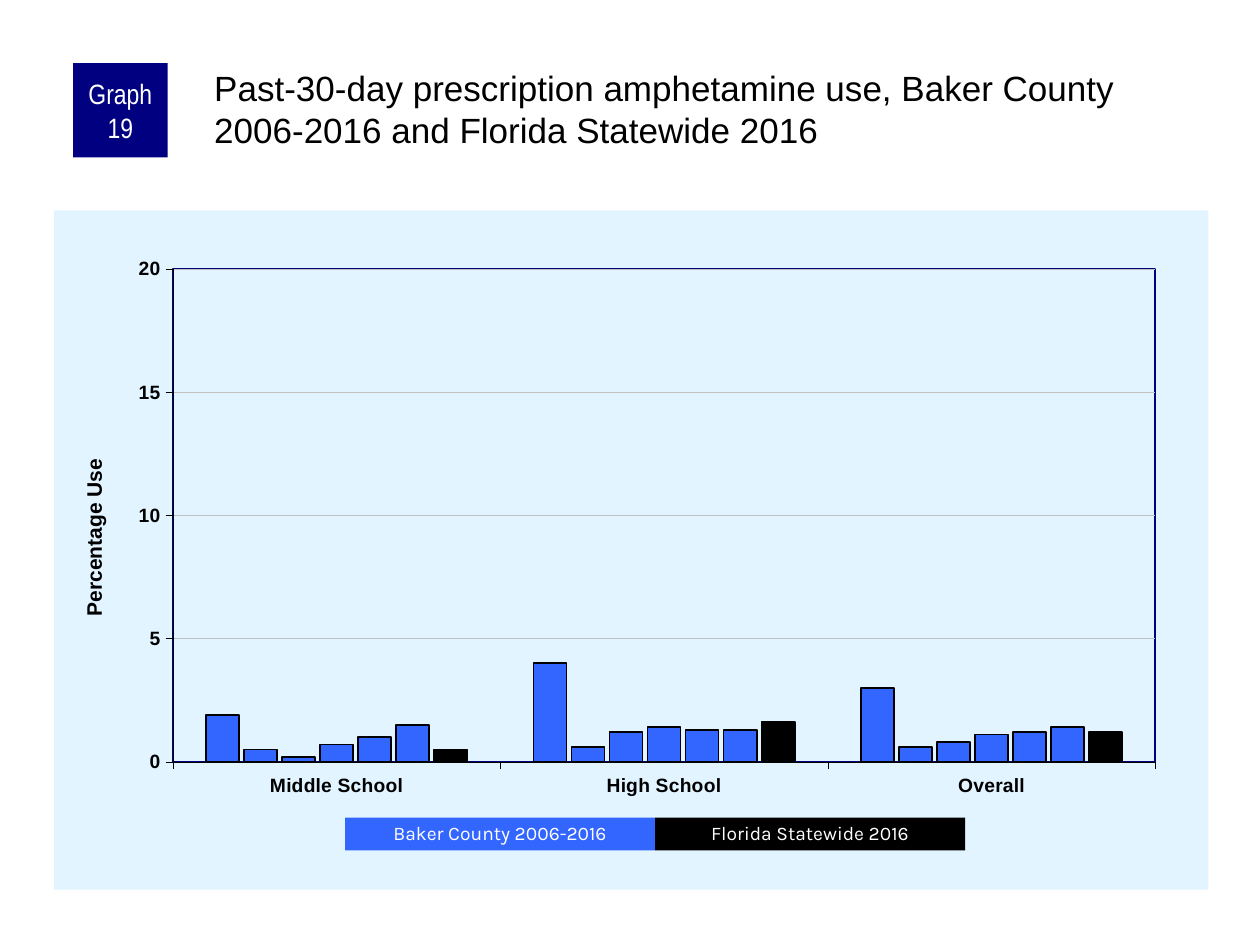
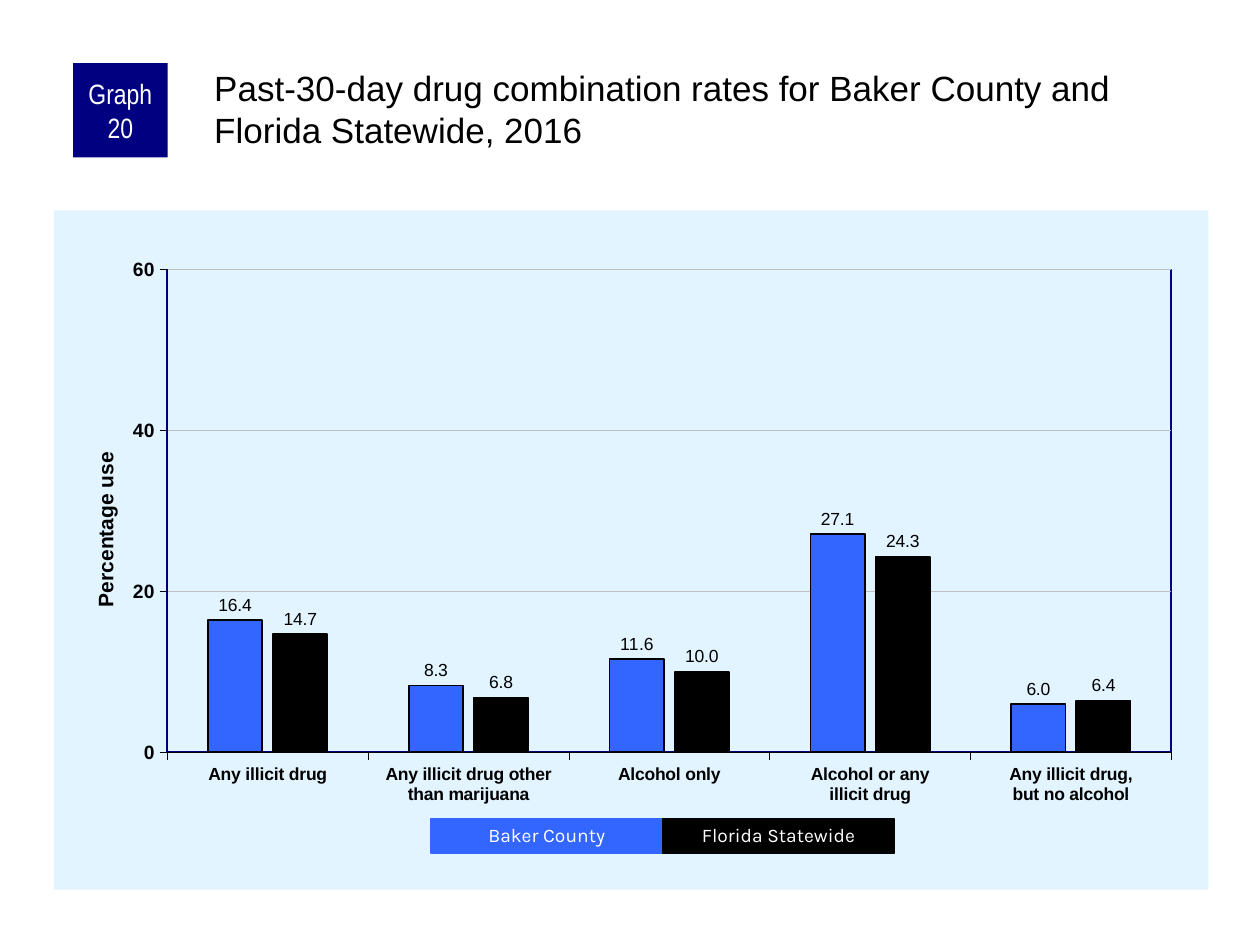
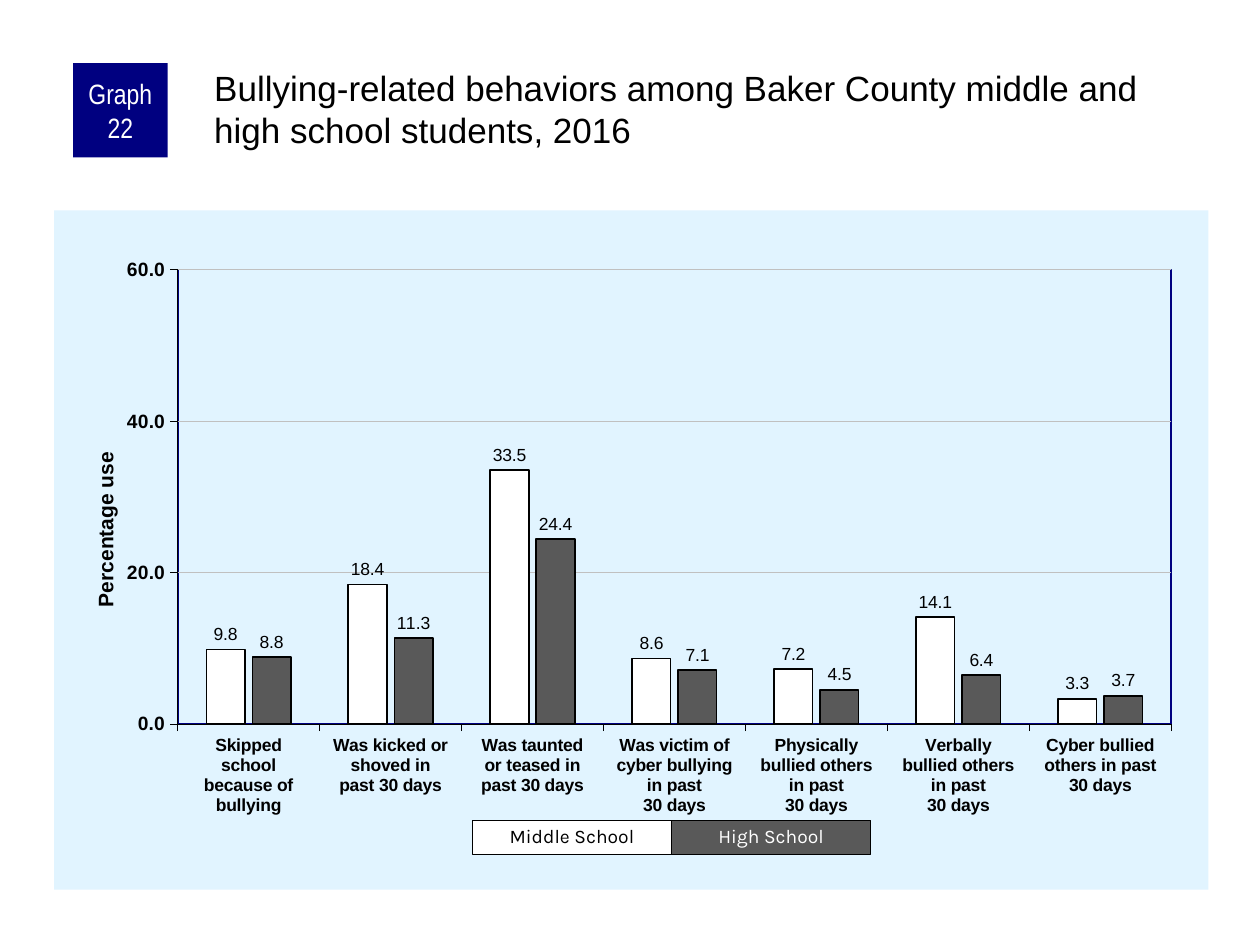
from dataclasses import dataclass

from lxml import etree
from pptx import Presentation
from pptx.chart.data import CategoryChartData
from pptx.dml.color import RGBColor
from pptx.enum.chart import XL_CHART_TYPE, XL_LABEL_POSITION, XL_TICK_MARK
from pptx.enum.shapes import MSO_SHAPE
from pptx.enum.text import MSO_ANCHOR, PP_ALIGN
from pptx.oxml.ns import qn
from pptx.util import Inches, Pt

COLUMN = XL_CHART_TYPE.COLUMN_CLUSTERED
OUTSIDE = XL_TICK_MARK.OUTSIDE
ABOVE = XL_LABEL_POSITION.OUTSIDE_END
RECT = MSO_SHAPE.RECTANGLE
MIDDLE = MSO_ANCHOR.MIDDLE
CENTER = PP_ALIGN.CENTER


@dataclass(frozen=True)
class Theme:
    navy: str = "000080"
    blue: str = "3366FF"
    black: str = "000000"
    white: str = "FFFFFF"
    gray: str = "595959"
    panel: str = "E1F4FF"
    grid: str = "C0C0C0"
    sans: str = "Arial"
    narrow: str = "Arial Narrow"
    key: str = "Karla"
    title: float = 20
    badge: float = 16
    axis: float = 11
    label: float = 10
    name: float = 12


THEME = Theme()


def style(font, size, face=THEME.sans, color=THEME.black, bold=False):
    font.size = Pt(size)
    font.name = face
    font.bold = bold
    font.color.rgb = RGBColor.from_string(color)


def paint(shape, color):
    shape.fill.solid()
    shape.fill.fore_color.rgb = RGBColor.from_string(color)


def stroke(line, color, width):
    line.color.rgb = RGBColor.from_string(color)
    line.width = Pt(width)


def add_box(slide, text, area, fill, size, face, color, edge=None):
    box = slide.shapes.add_shape(RECT, *map(Inches, area))
    box.shadow.inherit = False
    paint(box, fill)
    if edge:
        stroke(box.line, edge, 0.75)
    else:
        box.line.fill.background()
    frame = box.text_frame
    frame.text = text
    frame.word_wrap = True
    frame.vertical_anchor = MIDDLE
    frame.margin_left = frame.margin_right = Inches(0.05)
    frame.margin_top = frame.margin_bottom = 0
    para = frame.paragraphs[0]
    para.alignment = CENTER
    style(para.runs[0].font, size, face, color)
    return para


def add_head(slide, number, text):
    add_box(slide, f"Graph {number}", (0.58, 0.5, 0.75, 0.75), THEME.navy,
            THEME.badge, THEME.narrow, THEME.white)
    box = slide.shapes.add_textbox(*map(Inches, (1.67, 0.5, 7.92, 0.83)))
    frame = box.text_frame
    frame.text = text
    frame.word_wrap = True
    frame.margin_left = frame.margin_top = Inches(0.03)
    frame.margin_right = frame.margin_bottom = 0
    style(frame.paragraphs[0].runs[0].font, THEME.title)


def add_key(slide, left, top, width, height, items):
    for i, (text, fill, color, edge) in enumerate(items):
        area = (left + i * width, top, width, height)
        para = add_box(slide, text, area, fill, THEME.axis, THEME.key, color, edge)
        para.line_spacing = 0.9


def make_layout(inner=False, **place):
    layout = etree.Element(qn("c:layout"))
    manual = etree.SubElement(layout, qn("c:manualLayout"))
    values = {"layoutTarget": "inner"} if inner else {}
    values.update(xMode="edge", yMode="edge", **place)
    for name, value in values.items():
        etree.SubElement(manual, qn(f"c:{name}")).set("val", str(value))
    return layout


def drop_layout(node):
    for old in node.findall(qn("c:layout")):
        node.remove(old)


def make_props(fill=None, edge=None):
    props = etree.Element(qn("c:spPr"))

    def add_paint(parent, color):
        if color:
            solid = etree.SubElement(parent, qn("a:solidFill"))
            etree.SubElement(solid, qn("a:srgbClr")).set("val", color)
        else:
            etree.SubElement(parent, qn("a:noFill"))

    add_paint(props, fill)
    line = etree.SubElement(props, qn("a:ln"))
    if edge:
        line.set("w", str(Pt(1)))
    add_paint(line, edge)
    return props


def set_axis(axis, size):
    axis.major_tick_mark = OUTSIDE
    style(axis.tick_labels.font, size, bold=True)
    stroke(axis.format.line, THEME.black, 0.25)


def set_scale(axis, name, spot, top, step, digits):
    set_axis(axis, THEME.axis)
    axis.minimum_scale, axis.maximum_scale, axis.major_unit = 0, top, step
    axis.tick_labels.number_format = digits
    axis.tick_labels.number_format_is_linked = False
    stroke(axis.major_gridlines.format.line, THEME.grid, 0.25)
    frame = axis.axis_title.text_frame
    frame.text = name
    style(frame.paragraphs[0].runs[0].font, THEME.name, bold=True)
    title = axis.axis_title._element
    drop_layout(title)
    title.find(qn("c:tx")).addnext(make_layout(x=spot[0], y=spot[1]))


def add_graph(slide, cats, rows, colors, plot, name, spot, top, step,
              gap=150, overlap=-20, size=THEME.label, digits="0", labels=True):
    data = CategoryChartData()
    data.categories = cats
    for i, row in enumerate(rows, 1):
        data.add_series(f"Series {i}", row)
    area = map(Inches, (0.43, 1.67, 9.16, 5.39))
    chart = slide.shapes.add_chart(COLUMN, *area, data).chart
    chart.has_legend = chart.has_title = False
    style(chart.font, THEME.label)
    set_axis(chart.category_axis, size)
    set_scale(chart.value_axis, name, spot, top, step, digits)

    bars = chart.plots[0]
    bars.gap_width, bars.overlap = gap, overlap
    bars.vary_by_categories = False
    for series, color in zip(bars.series, colors):
        paint(series.format, color)
        stroke(series.format.line, THEME.black, 1)
        series.invert_if_negative = False
        if labels:
            marks = series.data_labels
            marks.show_value = True
            marks.number_format = "0.0"
            marks.number_format_is_linked = False
            marks.position = ABOVE
            style(marks.font, THEME.label)

    body = chart._chartSpace.chart
    body.addnext(make_props(THEME.panel))
    inner = body.plotArea
    drop_layout(inner)
    inner.insert(0, make_layout(True, **dict(zip("xywh", plot))))
    inner.append(make_props(edge=THEME.navy))


def add_use(slide):
    add_head(slide, 19, "Past-30-day prescription amphetamine use, "
             "Baker County 2006-2016 and Florida Statewide 2016")
    rows = [(1.9, 4, 3), (0.5, 0.6, 0.6), (0.2, 1.2, 0.8), (0.7, 1.4, 1.1),
            (1, 1.3, 1.2), (1.5, 1.3, 1.4), (0.5, 1.6, 1.2)]
    add_graph(slide, ["Middle School", "High School", "Overall"], rows,
              [THEME.blue] * 6 + [THEME.black], (0.103, 0.086, 0.851, 0.726),
              "Percentage Use", (0.02, 0.36), 20, 5, gap=200, overlap=-15,
              size=THEME.axis, labels=False)
    add_key(slide, 2.74, 6.49, 2.46, 0.26, [
        ("Baker County 2006-2016", THEME.blue, THEME.white, None),
        ("Florida Statewide 2016", THEME.black, THEME.white, None)])


def add_mix(slide):
    add_head(slide, 20, "Past-30-day drug combination rates for "
             "Baker County and Florida Statewide, 2016")
    cats = ["Any illicit drug", "Any illicit drug other than marijuana",
            "Alcohol only", "Alcohol or any\nillicit drug",
            "Any illicit drug,\nbut no alcohol"]
    rows = [(16.4, 8.3, 11.6, 27.1, 6), (14.7, 6.8, 10, 24.3, 6.4)]
    add_graph(slide, cats, rows, [THEME.blue, THEME.black],
              (0.098, 0.087, 0.87, 0.711), "Percentage use", (0.03, 0.35), 60, 20)
    add_key(slide, 3.42, 6.5, 1.84, 0.27, [
        ("Baker County", THEME.blue, THEME.white, THEME.blue),
        ("Florida Statewide", THEME.black, THEME.white, THEME.black)])


def add_bully(slide):
    add_head(slide, 22, "Bullying-related behaviors among "
             "Baker County middle and high school students, 2016")
    cats = ["Skipped\nschool\nbecause of\nbullying",
            "Was kicked or\nshoved in\npast 30 days",
            "Was taunted\nor teased in\npast 30 days",
            "Was victim of\ncyber bullying\nin past\n30 days",
            "Physically\nbullied others\nin past\n30 days",
            "Verbally\nbullied others\nin past\n30 days",
            "Cyber bullied\nothers in past\n30 days"]
    rows = [(9.8, 18.4, 33.5, 8.6, 7.2, 14.1, 3.3),
            (8.8, 11.3, 24.4, 7.1, 4.5, 6.4, 3.7)]
    add_graph(slide, cats, rows, [THEME.white, THEME.gray],
              (0.107, 0.087, 0.861, 0.669), "Percentage use", (0.03, 0.35),
              60, 20, digits="0.0")
    add_key(slide, 3.75, 6.51, 1.58, 0.27, [
        ("Middle School", THEME.white, THEME.black, THEME.black),
        ("High School", THEME.gray, THEME.white, THEME.black)])


def main():
    deck = Presentation()
    deck.slide_width, deck.slide_height = Inches(10), Inches(7.5)
    for build in (add_use, add_mix, add_bully):
        build(deck.slides.add_slide(deck.slide_layouts[6]))
    deck.save("out.pptx")


if __name__ == "__main__":
    main()
